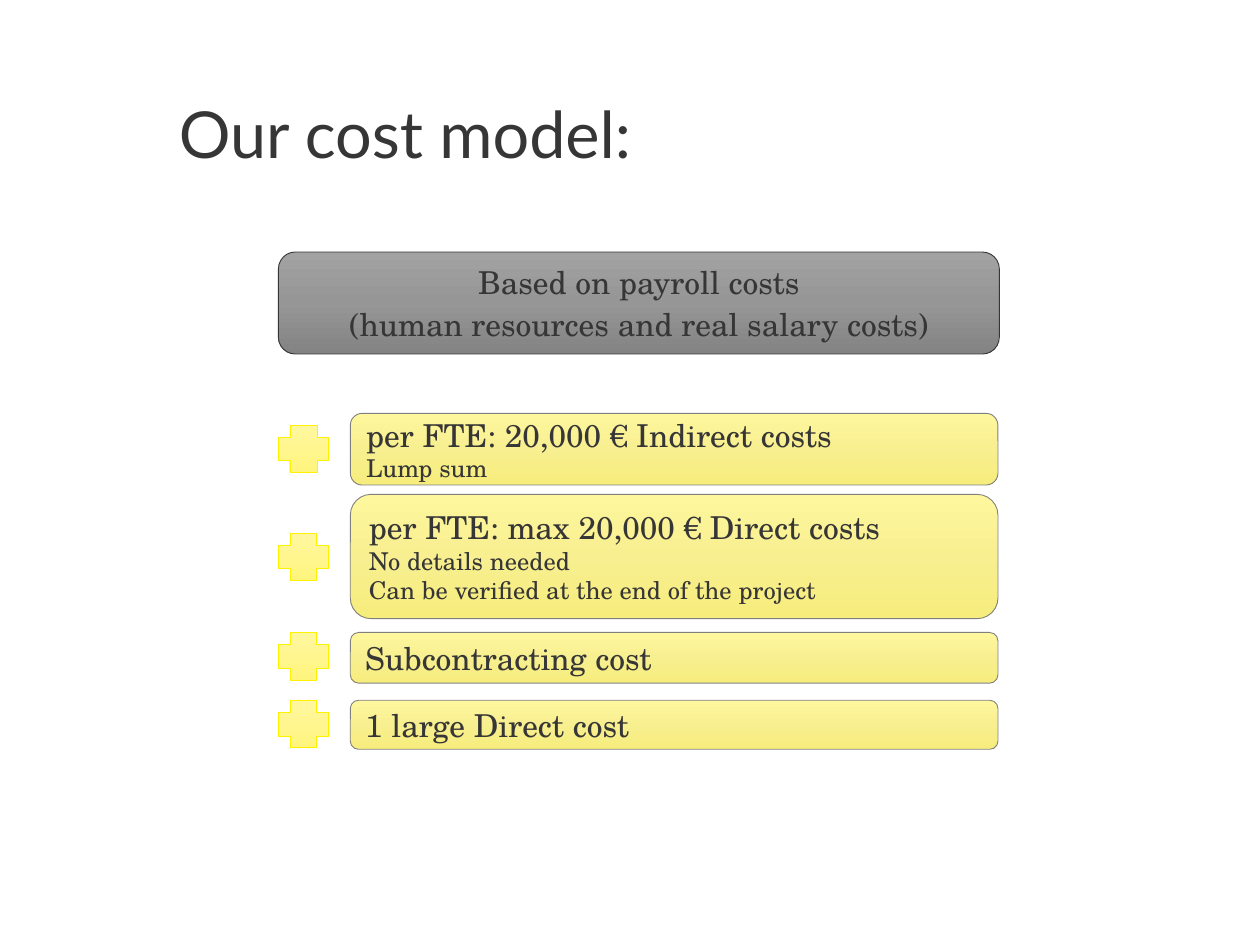
import copy

import pptx
import pptx.dml.color
import pptx.enum.shapes
import pptx.enum.text
import pptx.util

Pt = pptx.util.Pt
RGBColor = pptx.dml.color.RGBColor
MSO_SHAPE = pptx.enum.shapes.MSO_SHAPE
PP_ALIGN = pptx.enum.text.PP_ALIGN
MSO_ANCHOR = pptx.enum.text.MSO_ANCHOR

TEXT = RGBColor(0x37, 0x36, 0x36)
BOX_LINE = RGBColor(0x80, 0x80, 0x80)
PLUS_LINE = RGBColor(0xFF, 0xF2, 0x00)
GREYS = [RGBColor(0xA2, 0xA2, 0xA2), RGBColor(0x96, 0x96, 0x96), RGBColor(0x83, 0x83, 0x83)]
BOX_YELLOWS = [RGBColor(0xFF, 0xF7, 0x9D), RGBColor(0xF7, 0xEF, 0x90), RGBColor(0xF7, 0xED, 0x7C)]
PLUS_YELLOWS = [RGBColor(0xFF, 0xF7, 0x9E), RGBColor(0xFF, 0xF6, 0x90), RGBColor(0xFF, 0xF5, 0x7C)]

LEFT = 159.1
PLUS_WIDTH = 28.8
BOX_LEFT, BOX_WIDTH = 200.2, 370.1


def add_gradient_shape(kind, left, top, width, height, colors, line_color):
    shape = slide.shapes.add_shape(kind, Pt(left), Pt(top), Pt(width), Pt(height))
    shape.shadow.inherit = False
    shape.line.color.rgb = line_color
    shape.line.width = Pt(0.5)
    # Top-to-bottom gradient with a third stop in the middle
    shape.fill.gradient()
    shape.fill.gradient_angle = 270
    first_stop = shape._element.spPr.xpath("a:gradFill/a:gsLst/a:gs")[0]
    first_stop.addnext(copy.deepcopy(first_stop))
    for stop, position, color in zip(shape.fill.gradient_stops, (0, 0.5, 1), colors):
        stop.position = position
        stop.color.rgb = color
    return shape


def write_lines(shape, lines, sizes, alignment, space_before):
    frame = shape.text_frame
    frame.word_wrap = True
    frame.vertical_anchor = MSO_ANCHOR.MIDDLE
    frame.text = "\n".join(lines)
    for index, paragraph in enumerate(frame.paragraphs):
        paragraph.alignment = alignment
        paragraph.font.name = "TeX Gyre Schola"
        paragraph.font.size = Pt(sizes[min(index, 1)])
        paragraph.font.color.rgb = TEXT
        if index:
            paragraph.space_before = Pt(space_before)


presentation = pptx.Presentation()
presentation.slide_width = Pt(720)
presentation.slide_height = Pt(540)
slide = presentation.slides.add_slide(presentation.slide_layouts[5])

# Title
title = slide.shapes.title
title.left, title.top, title.width, title.height = Pt(102.2), Pt(59.8), Pt(583.9), Pt(87.8)
frame = title.text_frame
frame.margin_left = frame.margin_top = frame.margin_right = frame.margin_bottom = 0
frame.vertical_anchor = MSO_ANCHOR.TOP
frame.text = "Our cost model:"
paragraph = frame.paragraphs[0]
paragraph.alignment = PP_ALIGN.LEFT
paragraph.line_spacing = Pt(38)
paragraph.font.name = "Lato"
paragraph.font.size = Pt(37)
paragraph.font.color.rgb = TEXT

# Basis of the model
basis = add_gradient_shape(MSO_SHAPE.ROUNDED_RECTANGLE, LEFT, 144, 412, 58.3, GREYS, TEXT)
write_lines(basis, ["Based on payroll costs", "(human resources and real salary costs)"],
            (18, 18), PP_ALIGN.CENTER, 2)

# Added costs: box top, box height, plus top, plus height, lines
costs = [
    (236.2, 41, 243.2, 26.6, ["per FTE: 20,000 € Indirect costs", "Lump sum"]),
    (282.5, 71, 304.7, 27.2, ["per FTE: max 20,000 € Direct costs", "No details needed",
                              "Can be verified at the end of the project"]),
    (361.4, 29, 361.4, 27.4, ["Subcontracting cost"]),
    (400.2, 28, 400.2, 27.2, ["1 large Direct cost"]),
]
for box_top, box_height, plus_top, plus_height, lines in costs:
    box = add_gradient_shape(MSO_SHAPE.ROUNDED_RECTANGLE, BOX_LEFT, box_top,
                             BOX_WIDTH, box_height, BOX_YELLOWS, BOX_LINE)
    write_lines(box, lines, (18, 14), PP_ALIGN.LEFT, 0)
    add_gradient_shape(MSO_SHAPE.CROSS, LEFT, plus_top, PLUS_WIDTH, plus_height,
                       PLUS_YELLOWS, PLUS_LINE)

presentation.save("out.pptx")
